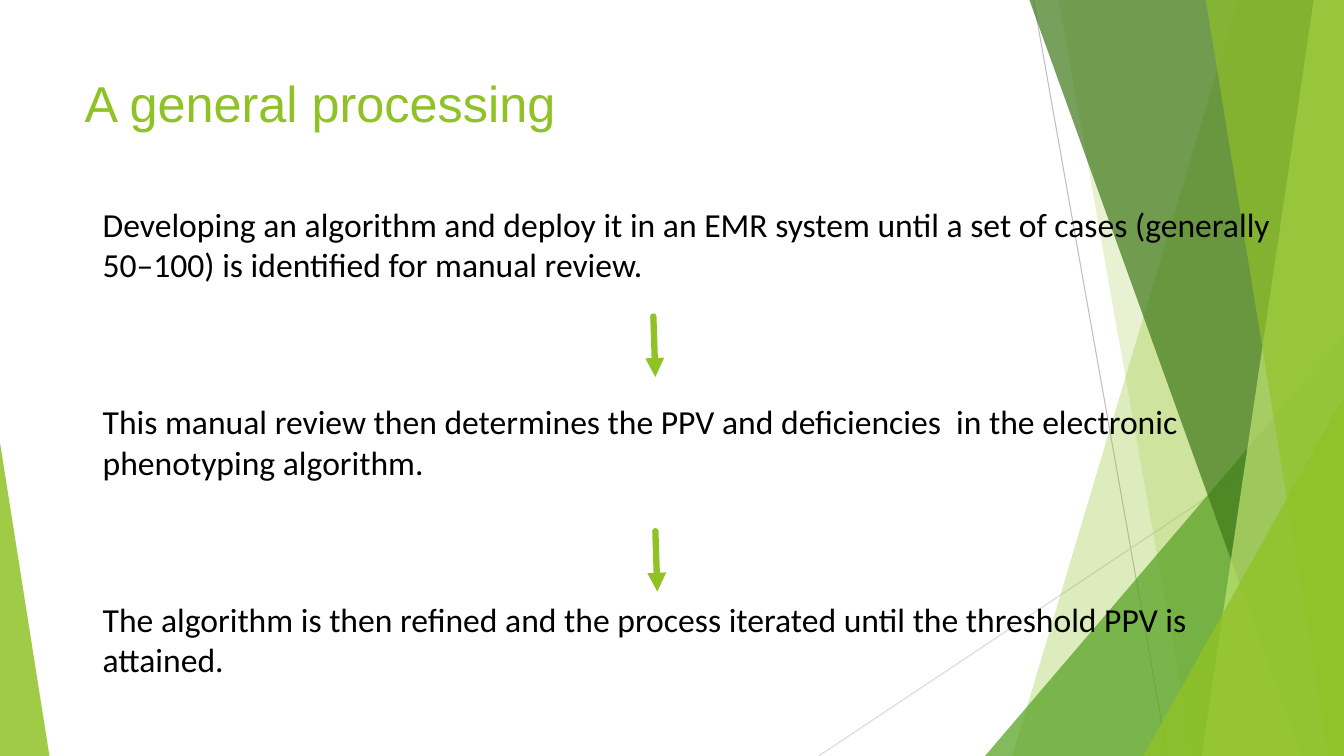
from lxml.etree import SubElement
from pptx import Presentation
from pptx.dml.color import RGBColor
from pptx.enum.shapes import MSO_CONNECTOR, MSO_SHAPE
from pptx.enum.text import MSO_ANCHOR, PP_ALIGN
from pptx.oxml.ns import qn
from pptx.util import Inches, Pt

COLORS = {
    "lime": "90C226", "green": "54A021", "forest": "3F7819", "pale": "C0E474",
    "gray": "BFBFBF", "light_gray": "D9D9D9", "black": "000000",
}
WIDTH, HEIGHT = 13.33, 7.5

deck = Presentation()
deck.slide_width, deck.slide_height = Inches(WIDTH), Inches(HEIGHT)
page = deck.slides.add_slide(deck.slide_layouts[5])


def add_line(start, end, color, weight):
    points = [Inches(value) for value in (*start, *end)]
    line = page.shapes.add_connector(MSO_CONNECTOR.STRAIGHT, *points)
    line.line.color.rgb = RGBColor.from_string(COLORS[color])
    line.line.width = Pt(weight)
    SubElement(line._element.spPr, qn("a:effectLst"))
    return line


def paint(shape, color, opacity):
    shape.shadow.inherit = False
    shape.fill.solid()
    shape.fill.fore_color.rgb = RGBColor.from_string(COLORS[color])
    shape.line.fill.background()
    tint = shape._element.spPr.find(qn("a:solidFill"))[0]
    SubElement(tint, qn("a:alpha"), val=str(opacity * 1000))


# Thin background lines
add_line((10.25, 0), (11.58, HEIGHT), "gray", 0.75)
add_line((WIDTH, 4.03), (8.12, HEIGHT), "light_gray", 0.75)

# Translucent facets, back to front: bands run from a slanted left side to the
# right edge, triangles stand on the bottom edge
facets = [
    ("band", 12.28, 10.04, "lime", 30),
    ("band", 10.5, 11.83, "lime", 20),
    ("triangle", 9.77, 3.33, 3.56, 1, "green", 72),
    ("band", 10.21, 12.91, "forest", 70),
    ("band", 13.03, 11.92, "pale", 70),
    ("band", 11.96, 13.18, "lime", 65),
    ("triangle", 11.34, 3.93, 1.99, 1, "lime", 80),
    ("triangle", 0, 4.39, 0.49, 0, "lime", 85),
]
for kind, *geometry, color, opacity in facets:
    if kind == "band":
        top_x, bottom_x = geometry
        outline = page.shapes.build_freeform(Inches(top_x), 0)
        corners = [(WIDTH, 0), (WIDTH, HEIGHT), (bottom_x, HEIGHT)]
        outline.add_line_segments([(Inches(x), Inches(y)) for x, y in corners])
        facet = outline.convert_to_shape()
    else:
        left, top, width, apex = geometry
        facet = page.shapes.add_shape(
            MSO_SHAPE.ISOSCELES_TRIANGLE, Inches(left), Inches(top),
            Inches(width), Inches(HEIGHT - top))
        facet.adjustments[0] = apex
    paint(facet, color, opacity)

# Title
title = page.shapes.title
title.left, title.top = Inches(0.74), Inches(0.67)
title.width, title.height = Inches(9.4), Inches(1.44)
title.text_frame.text = "A general processing"
title.text_frame.vertical_anchor = MSO_ANCHOR.TOP
para = title.text_frame.paragraphs[0]
para.alignment = PP_ALIGN.LEFT
para.font.name, para.font.size = "Arial", Pt(36)
para.font.color.rgb = RGBColor.from_string(COLORS["lime"])

# Process steps
steps = [
    "Developing an algorithm and deploy it in an EMR system until a set of cases "
    "(generally 50–100) is identified for manual review.",
    "This manual review then determines the PPV and deficiencies  in the electronic "
    "phenotyping algorithm.",
    "The algorithm is then refined and the process iterated until the threshold PPV "
    "is attained.",
]
for index, step in enumerate(steps):
    box = page.shapes.add_textbox(
        Inches(0.92), Inches(1.97 + 1.96 * index), Inches(12.08), Inches(1.21))
    box.text_frame.word_wrap = True
    box.text_frame.text = step
    para = box.text_frame.paragraphs[0]
    para.font.name, para.font.size = "Calibri", Pt(24)
    para.font.color.rgb = RGBColor.from_string(COLORS["black"])

# Arrows between the steps
for x, y in [(6.48, 3.14), (6.5, 5.27)]:
    arrow = add_line((x, y), (x + 0.02, y + 0.6), "lime", 4.5)
    stroke = arrow.line._get_or_add_ln()
    stroke.set("cap", "rnd")
    SubElement(stroke, qn("a:tailEnd"), type="triangle")

deck.save("out.pptx")
